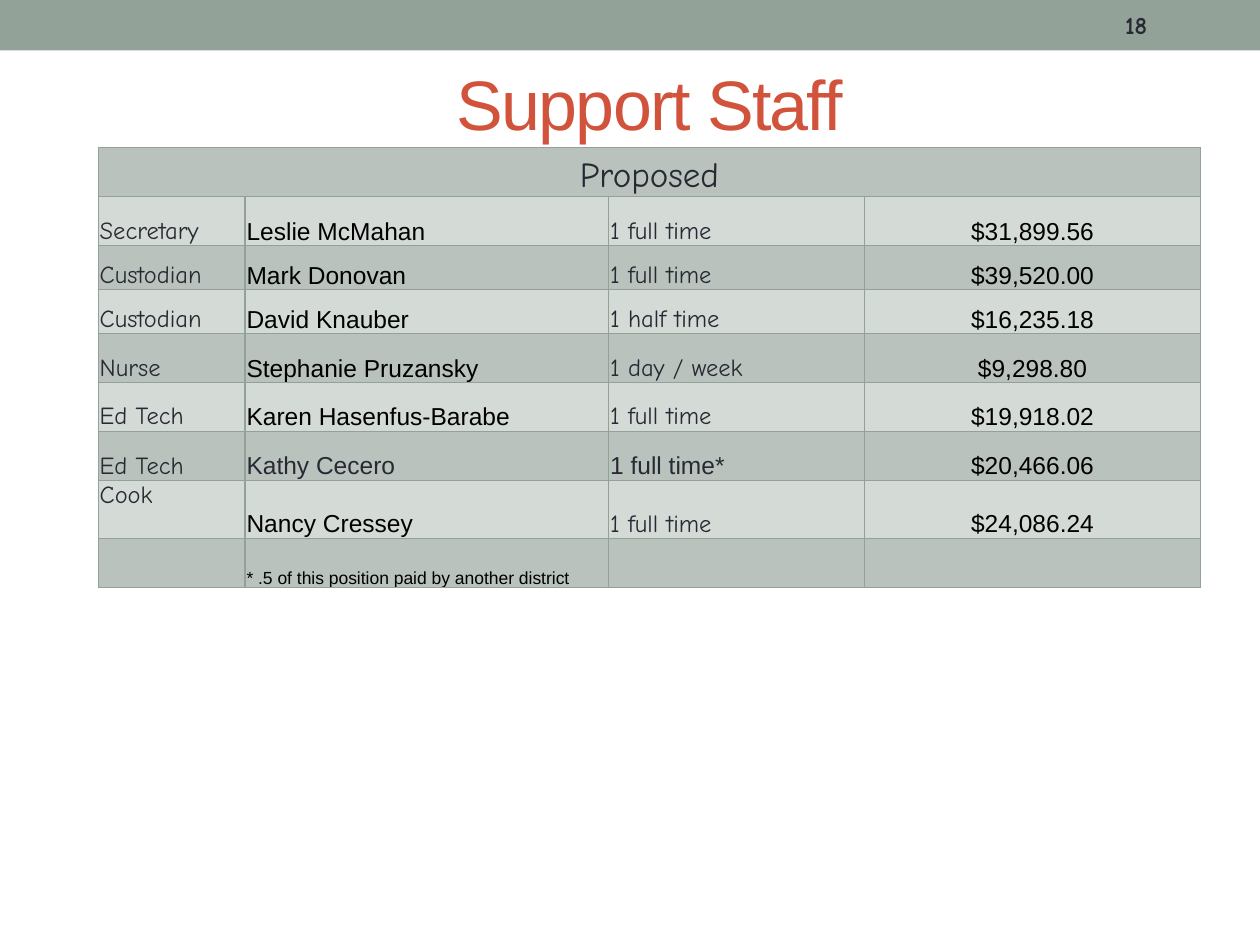
from dataclasses import dataclass

from lxml.etree import SubElement
from pptx import Presentation
from pptx.dml.color import RGBColor
from pptx.enum.shapes import MSO_SHAPE
from pptx.enum.text import MSO_ANCHOR, PP_ALIGN
from pptx.oxml.ns import qn
from pptx.util import Cm, Pt


@dataclass(frozen=True)
class Theme:
    sage: str = "93A299"
    light_band: str = "D4DAD6"
    dark_band: str = "B9C2BC"
    red: str = "D2533C"
    ink: str = "292934"
    black: str = "000000"
    plain_font: str = "Arial"
    comic_font: str = "Comic Neue"
    title_size: int = 40
    heading_size: int = 20
    body_size: int = 14
    note_size: int = 10
    border_width: float = 0.75


THEME = Theme()
COLUMN_WIDTHS = (2.96, 7.33, 5.16, 6.77)
ROW_HEIGHTS = (0.99, 0.99, 0.89, 0.89, 0.98, 0.98, 0.99, 1.17, 1)
STAFF = (
    ("Secretary", "Leslie McMahan", "1 full time", "$31,899.56"),
    ("Custodian", "Mark Donovan", "1 full time", "$39,520.00"),
    ("Custodian", "David Knauber", "1 half time", "$16,235.18"),
    ("Nurse", "Stephanie Pruzansky", "1 day / week", "$9,298.80"),
    ("Ed Tech", "Karen Hasenfus-Barabe", "1 full time", "$19,918.02"),
    ("Ed Tech", "Kathy Cecero", "1 full time*", "$20,466.06"),
    ("Cook", "Nancy Cressey", "1 full time", "$24,086.24"),
)
SHARED_POSITION = "Kathy Cecero"
FOOTNOTE = "* .5 of this position paid by another district"


def write(frame, text, font, size, color, alignment=PP_ALIGN.LEFT, bold=False):
    paragraph = frame.paragraphs[0]
    paragraph.alignment = alignment
    paragraph.font.name = font
    paragraph.font.size = Pt(size)
    paragraph.font.bold = bold
    paragraph.font.color.rgb = RGBColor.from_string(color)
    run = paragraph.add_run()
    run.text = text
    return run


def add_header_band(slide, width):
    band = slide.shapes.add_shape(MSO_SHAPE.RECTANGLE, 0, 0, width, Cm(1.02))
    band.shadow.inherit = False
    band.fill.solid()
    band.fill.fore_color.rgb = RGBColor.from_string(THEME.sage)
    band.line.fill.background()


def add_text_frame(slide, left, top, width, height):
    box = slide.shapes.add_textbox(Cm(left), Cm(top), Cm(width), Cm(height))
    frame = box.text_frame
    frame.word_wrap = True
    frame.vertical_anchor = MSO_ANCHOR.MIDDLE
    return frame


def add_title(slide):
    frame = add_text_frame(slide, 3.56, 0.97, 19.08, 2.21)
    run = write(frame, "Support Staff", THEME.plain_font, THEME.title_size,
                THEME.red, PP_ALIGN.CENTER)
    run._r.get_or_add_rPr().set("spc", "-100")


def add_page_number(slide):
    frame = add_text_frame(slide, 22.43, 0.05, 1.7, 0.91)
    write(frame, "18", THEME.comic_font, THEME.body_size, THEME.ink, bold=True)


def add_borders(cell):
    properties = cell._tc.get_or_add_tcPr()
    for side in ("a:lnL", "a:lnR", "a:lnT", "a:lnB"):
        line = SubElement(properties, qn(side), w=str(Pt(THEME.border_width)))
        fill = SubElement(line, qn("a:solidFill"))
        SubElement(fill, qn("a:srgbClr"), val=THEME.sage)


def format_cell(cell, fill_color):
    cell.margin_left = cell.margin_right = cell.margin_top = Cm(0.03)
    cell.margin_bottom = 0
    cell.vertical_anchor = MSO_ANCHOR.BOTTOM
    add_borders(cell)
    cell.fill.solid()
    cell.fill.fore_color.rgb = RGBColor.from_string(fill_color)


def add_grid(slide):
    shape = slide.shapes.add_table(
        len(ROW_HEIGHTS), len(COLUMN_WIDTHS), Cm(1.98), Cm(2.97),
        Cm(sum(COLUMN_WIDTHS)), Cm(sum(ROW_HEIGHTS)))
    table = shape.table
    table.first_row = table.horz_banding = False
    for column, width in zip(table.columns, COLUMN_WIDTHS):
        column.width = Cm(width)
    for index, (row, height) in enumerate(zip(table.rows, ROW_HEIGHTS)):
        row.height = Cm(height)
        for cell in row.cells:
            format_cell(cell, THEME.light_band if index % 2 else THEME.dark_band)
    return table


def write_staff_row(table, index, member):
    role, name, hours, salary = member
    shared = name == SHARED_POSITION
    name_color = THEME.ink if shared else THEME.black
    hours_font = THEME.plain_font if shared else THEME.comic_font
    entries = (
        (role, THEME.comic_font, THEME.ink, PP_ALIGN.LEFT),
        (name, THEME.plain_font, name_color, PP_ALIGN.LEFT),
        (hours, hours_font, THEME.ink, PP_ALIGN.LEFT),
        (salary, THEME.plain_font, THEME.black, PP_ALIGN.CENTER),
    )
    for column, (text, font, color, alignment) in enumerate(entries):
        write(table.cell(index, column).text_frame, text, font,
              THEME.body_size, color, alignment)


def add_staff_table(slide):
    table = add_grid(slide)
    heading = table.cell(0, 0)
    heading.merge(table.cell(0, len(COLUMN_WIDTHS) - 1))
    write(heading.text_frame, "Proposed", THEME.comic_font,
          THEME.heading_size, THEME.ink, PP_ALIGN.CENTER)
    for index, member in enumerate(STAFF, start=1):
        write_staff_row(table, index, member)
    table.cell(len(STAFF), 0).vertical_anchor = MSO_ANCHOR.TOP
    write(table.cell(len(STAFF) + 1, 1).text_frame, FOOTNOTE,
          THEME.plain_font, THEME.note_size, THEME.black)


def main():
    presentation = Presentation()
    presentation.slide_width = Cm(25.4)
    presentation.slide_height = Cm(19.05)
    slide = presentation.slides.add_slide(presentation.slide_layouts[6])
    add_header_band(slide, presentation.slide_width)
    add_title(slide)
    add_staff_table(slide)
    add_page_number(slide)
    presentation.save("out.pptx")


if __name__ == "__main__":
    main()
